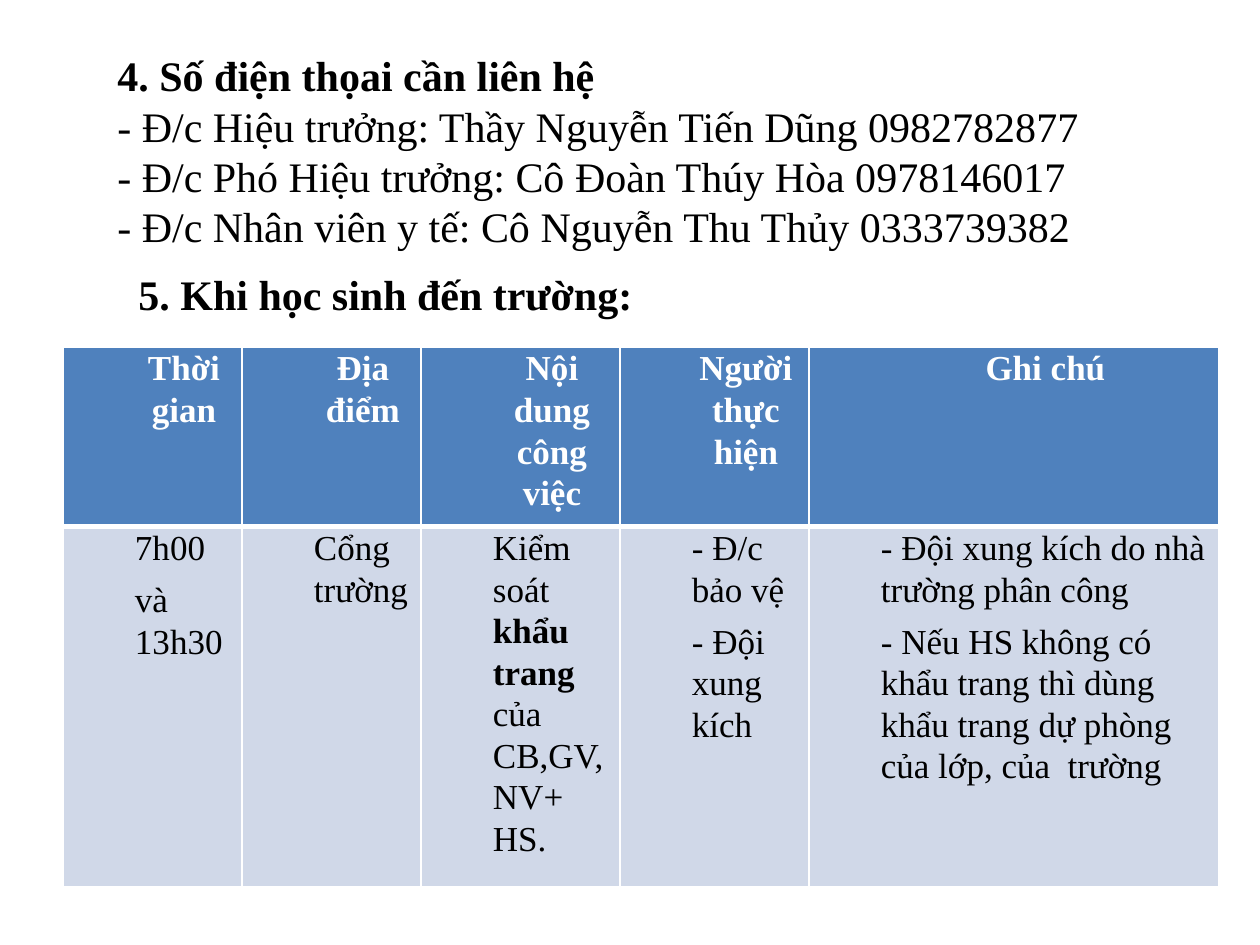
from dataclasses import dataclass

from lxml import etree
from pptx import Presentation
from pptx.dml.color import RGBColor
from pptx.enum.text import MSO_ANCHOR, MSO_AUTO_SIZE, PP_ALIGN
from pptx.oxml.ns import qn
from pptx.util import Pt

EMU_PER_PX = 914400 / 126
LEFT, CENTER, JUSTIFY = PP_ALIGN.LEFT, PP_ALIGN.CENTER, PP_ALIGN.JUSTIFY
MIDDLE = MSO_ANCHOR.MIDDLE
FIT_SHAPE = MSO_AUTO_SIZE.SHAPE_TO_FIT_TEXT


@dataclass(frozen=True)
class Theme:
    font: str = "Times New Roman"
    text: str = "000000"
    white: str = "FFFFFF"
    header_fill: str = "4F81BD"
    body_fill: str = "D0D8E8"
    heading_size: int = 24
    table_size: int = 20
    thin_line: int = 1
    thick_line: int = 3


THEME = Theme()

CONTACTS_TITLE = "4. Số điện thọai cần liên hệ"
CONTACTS = [
    "- Đ/c Hiệu trưởng: Thầy Nguyễn Tiến Dũng 0982782877",
    "- Đ/c Phó Hiệu trưởng: Cô Đoàn Thúy Hòa 0978146017",
    "- Đ/c Nhân viên y tế: Cô Nguyễn Thu Thủy 0333739382",
]
ARRIVAL_TITLE = "5. Khi học sinh đến trường:"

COLUMN_WIDTHS = [179, 179, 199, 189, 410]
ROW_HEIGHTS = [179, 360]
HEADERS = ["Thời gian", "Địa điểm", "Nội dung công việc", "Người thực hiện", "Ghi chú"]
# Each cell is a list of paragraphs; each paragraph is a list of (text, bold) runs.
DUTIES = [
    [[("7h00", False)], [("và 13h30", False)]],
    [[("Cổng trường", False)]],
    [[("Kiểm soát ", False), ("khẩu trang", True), (" của CB,GV,NV+ HS.", False)]],
    [[("- Đ/c bảo vệ", False)], [("- Đội xung kích", False)]],
    [
        [("- Đội xung kích do nhà trường phân công", False)],
        [("- Nếu HS không có khẩu trang thì dùng khẩu trang dự phòng của lớp, của  trường", False)],
    ],
]


def px(length):
    return round(length * EMU_PER_PX)


def write_paragraphs(text_frame, paragraphs, size, color, alignment):
    for index, runs in enumerate(paragraphs):
        paragraph = text_frame.paragraphs[0] if index == 0 else text_frame.add_paragraph()
        paragraph.alignment = alignment
        for text, bold in runs:
            run = paragraph.add_run()
            run.text = text
            run.font.name = THEME.font
            run.font.size = Pt(size)
            run.font.bold = bold
            run.font.color.rgb = RGBColor.from_string(color)


def add_text_block(slide, box, paragraphs, alignment):
    text_frame = slide.shapes.add_textbox(*map(px, box)).text_frame
    text_frame.word_wrap = False
    text_frame.auto_size = FIT_SHAPE
    text_frame.vertical_anchor = MIDDLE
    write_paragraphs(text_frame, paragraphs, THEME.heading_size, THEME.text, alignment)


def set_cell_borders(cell, top, bottom):
    properties = cell._tc.get_or_add_tcPr()
    widths = {"a:lnL": THEME.thin_line, "a:lnR": THEME.thin_line, "a:lnT": top, "a:lnB": bottom}
    for tag, width in widths.items():
        line = etree.SubElement(properties, qn(tag), w=str(Pt(width)))
        fill = etree.SubElement(line, qn("a:solidFill"))
        etree.SubElement(fill, qn("a:srgbClr"), val=THEME.white)


def format_cell(cell, paragraphs, fill, color, alignment):
    cell.margin_left = cell.margin_right = px(9)
    cell.margin_top = cell.margin_bottom = 0
    cell.fill.solid()
    cell.fill.fore_color.rgb = RGBColor.from_string(fill)
    write_paragraphs(cell.text_frame, paragraphs, THEME.table_size, color, alignment)
    for paragraph in cell.text_frame.paragraphs:
        paragraph.line_spacing = 1.07
        paragraph.space_before = paragraph.space_after = Pt(3)
        properties = paragraph._p.get_or_add_pPr()
        properties.set("marL", str(px(63)))
        properties.set("indent", "0")


def add_duty_table(slide, left, top):
    box = (left, top, sum(COLUMN_WIDTHS), sum(ROW_HEIGHTS))
    table = slide.shapes.add_table(
        len(ROW_HEIGHTS), len(COLUMN_WIDTHS), *map(px, box)
    ).table
    for column, width in zip(table.columns, COLUMN_WIDTHS):
        column.width = px(width)
    for row, height in zip(table.rows, ROW_HEIGHTS):
        row.height = px(height)
    for index, (header, duty) in enumerate(zip(HEADERS, DUTIES)):
        header_cell, duty_cell = table.cell(0, index), table.cell(1, index)
        set_cell_borders(header_cell, THEME.thin_line, THEME.thick_line)
        set_cell_borders(duty_cell, THEME.thick_line, THEME.thin_line)
        format_cell(header_cell, [[(header, True)]], THEME.header_fill, THEME.white, CENTER)
        format_cell(duty_cell, duty, THEME.body_fill, THEME.text, LEFT)


def main():
    presentation = Presentation()
    presentation.slide_width, presentation.slide_height = px(1260), px(945)
    slide = presentation.slides.add_slide(presentation.slide_layouts[6])
    contacts = [[(CONTACTS_TITLE, True)]] + [[(contact, False)] for contact in CONTACTS]
    add_text_block(slide, (105, 42, 1007, 217), contacts, LEFT)
    add_text_block(slide, (126, 262, 524, 63), [[(ARRIVAL_TITLE, True)]], JUSTIFY)
    add_duty_table(slide, 63, 347)
    presentation.save("out.pptx")


if __name__ == "__main__":
    main()
